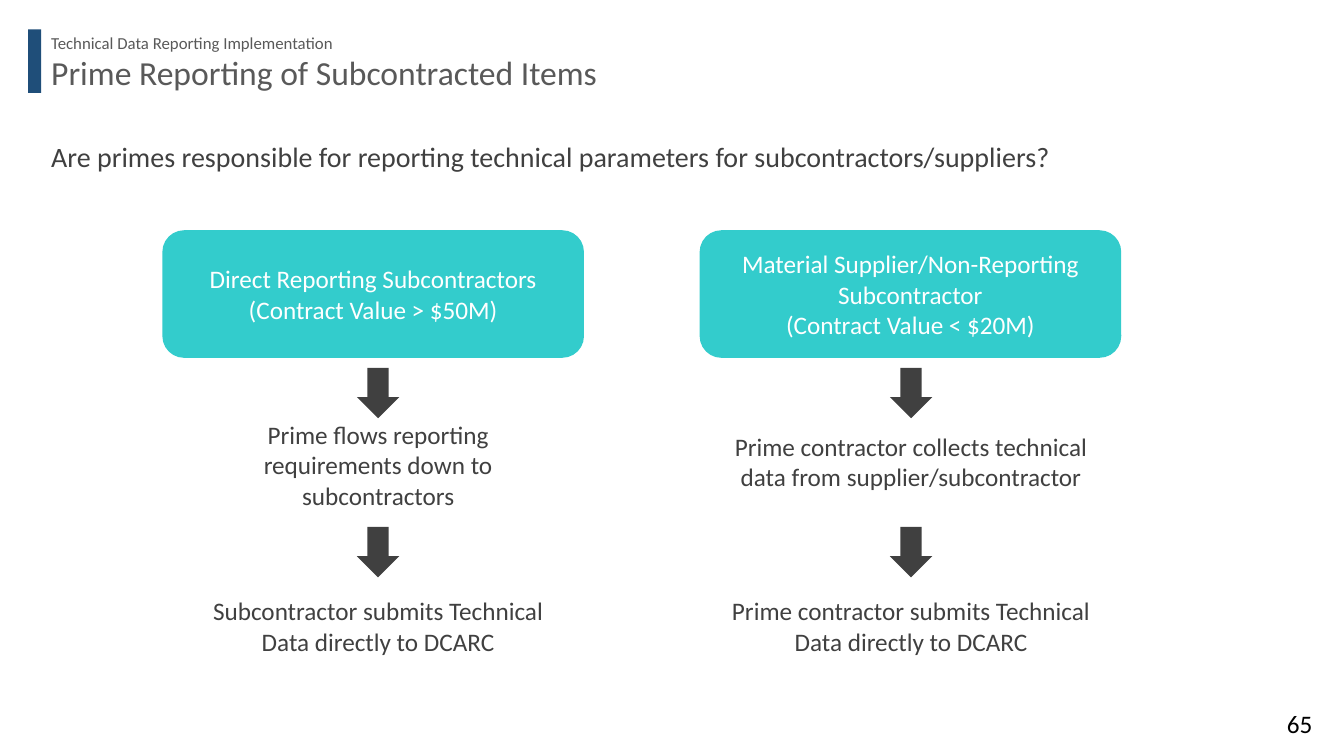
import pptx
import pptx.dml.color
import pptx.enum.shapes
import pptx.enum.text
import pptx.util

Cm = pptx.util.Cm
Pt = pptx.util.Pt
RGBColor = pptx.dml.color.RGBColor
Preset = pptx.enum.shapes.MSO_SHAPE
Anchor = pptx.enum.text.MSO_ANCHOR
Align = pptx.enum.text.PP_ALIGN

NAVY = RGBColor(0x1F, 0x4E, 0x79)
TEAL = RGBColor(0x33, 0xCC, 0xCC)
CHARCOAL = RGBColor(0x40, 0x40, 0x40)
GREY = RGBColor(0x59, 0x59, 0x59)
WHITE = RGBColor(0xFF, 0xFF, 0xFF)
BLACK = RGBColor(0x00, 0x00, 0x00)


class FlowSlide:
    """Holds the text style and the current slide, and draws its elements."""

    font_name = "Calibri"

    def __init__(self, deck):
        self.slide = deck.slides.add_slide(deck.slide_layouts[5])

    def fill_text(self, frame, lines, size, color, align, anchor, spacing):
        frame_format = {
            "word_wrap": True,
            "auto_size": pptx.enum.text.MSO_AUTO_SIZE.NONE,
            "vertical_anchor": anchor,
            "margin_left": Cm(0.25),
            "margin_right": Cm(0.25),
            "margin_top": Cm(0.13),
            "margin_bottom": Cm(0.13),
        }
        for name, value in frame_format.items():
            setattr(frame, name, value)
        frame.text = "\n".join(lines)
        for paragraph in frame.paragraphs:
            paragraph_format = {"alignment": align, "line_spacing": spacing, "space_before": Pt(0)}
            for name, value in paragraph_format.items():
                setattr(paragraph, name, value)
            for name, value in {"name": self.font_name, "size": Pt(size)}.items():
                setattr(paragraph.font, name, value)
            paragraph.font.color.rgb = color

    def title(self, text, left, top, width, height):
        heading = self.slide.shapes.title
        place = {"left": left, "top": top, "width": width, "height": height}
        for name, value in place.items():
            setattr(heading, name, Cm(value))
        self.fill_text(heading.text_frame, [text], 24, GREY, Align.LEFT, Anchor.TOP, 0.9)

    def text(self, text, left, top, width, height, size=18, color=CHARCOAL, align=Align.LEFT, spacing=1.0):
        box = self.slide.shapes.add_textbox(Cm(left), Cm(top), Cm(width), Cm(height))
        self.fill_text(box.text_frame, [text], size, color, align, Anchor.TOP, spacing)

    def shape(self, preset, left, top, width, height, fill):
        figure = self.slide.shapes.add_shape(preset, Cm(left), Cm(top), Cm(width), Cm(height))
        figure.shadow.inherit = False
        figure.fill.solid()
        figure.fill.fore_color.rgb = fill
        figure.line.fill.background()
        return figure

    def case_box(self, lines, left, top, width, height):
        case = self.shape(Preset.ROUNDED_RECTANGLE, left, top, width, height, TEAL)
        case.line.color.rgb = TEAL
        case.line.width = Pt(1)
        self.fill_text(case.text_frame, lines, 18, WHITE, Align.CENTER, Anchor.MIDDLE, 1.0)

    def flow(self, case_left, center, case_lines, steps):
        arrow_width, step_width = 1.07, 9.53
        self.case_box(case_lines, case_left, 5.82, 10.59, 3.18)
        for arrow_top, (step, top, height) in zip((9.27, 13.28), steps):
            self.shape(Preset.DOWN_ARROW, center - arrow_width / 2, arrow_top, arrow_width, 1.27, CHARCOAL)
            self.text(step, center - step_width / 2, top, step_width, height, align=Align.CENTER)


def main():
    deck = pptx.Presentation()
    deck.slide_width, deck.slide_height = Cm(33.87), Cm(19.05)
    page = FlowSlide(deck)

    page.shape(Preset.RECTANGLE, 0.71, 0.74, 0.33, 1.6, NAVY)
    page.title("Prime Reporting of Subcontracted Items", 1.04, 1.3, 16.71, 1.4)
    page.text("Technical Data Reporting Implementation", 1.04, 0.74, 12.01, 0.76, 12, GREY, spacing=0.9)
    page.text(
        "Are primes responsible for reporting technical parameters for subcontractors/suppliers?",
        1.04, 3.48, 29.13, 3.15, 20, spacing=0.9,
    )
    page.flow(
        4.11, 9.53,
        ["Direct Reporting Subcontractors", "(Contract Value > $50M)"],
        [
            ("Prime flows reporting requirements down to subcontractors", 10.44, 2.57),
            ("Subcontractor submits Technical Data directly to DCARC", 14.88, 1.8),
        ],
    )
    page.flow(
        17.65, 22.96,
        ["Material Supplier/Non-Reporting Subcontractor", "(Contract Value < $20M)"],
        [
            ("Prime contractor collects technical data from supplier/subcontractor", 10.74, 1.8),
            ("Prime contractor submits Technical Data directly to DCARC", 14.88, 1.8),
        ],
    )
    page.text("65", 32.18, 17.73, 1.4, 1.02, color=BLACK)

    deck.save("out.pptx")


if __name__ == "__main__":
    main()
